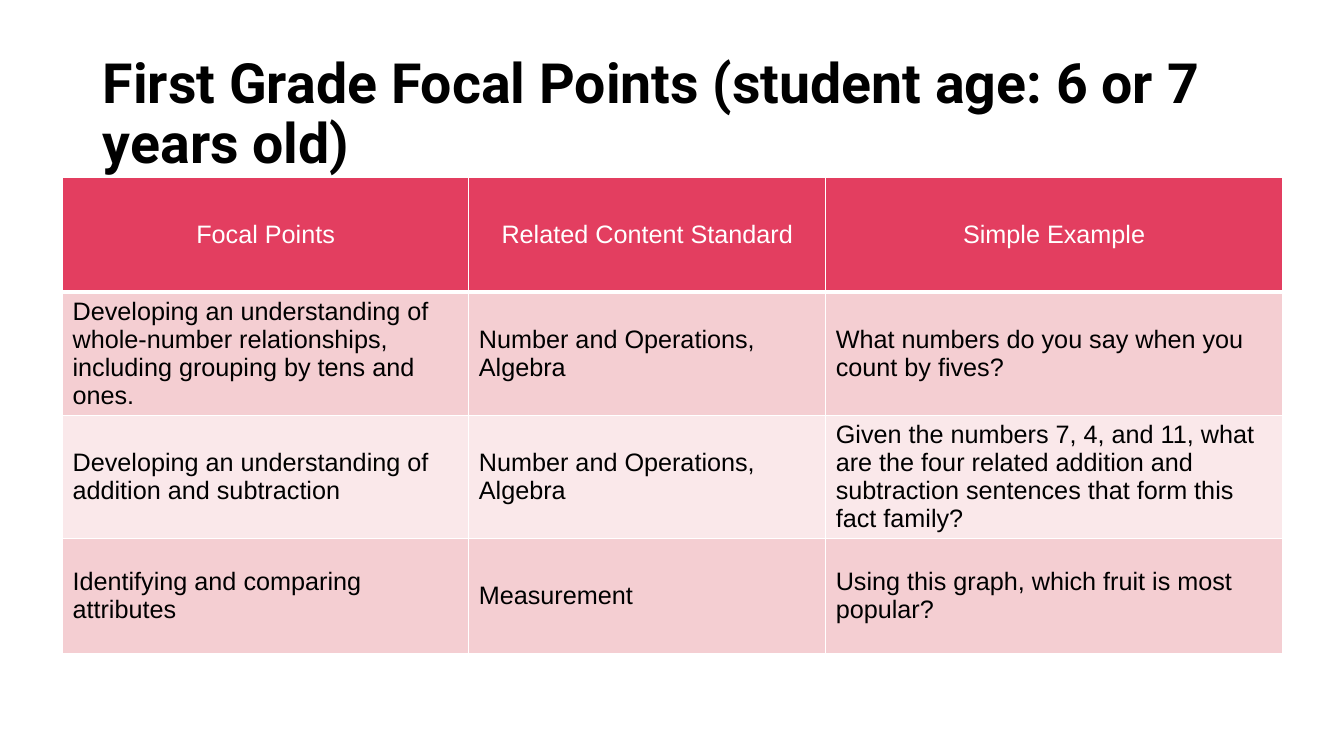
import pptx
import pptx.util
import pptx.dml.color
import pptx.enum.text
import pptx.oxml
import pptx.oxml.ns
from pptx.util import Inches

COLORS = {
    "black": "000000",
    "white": "FFFFFF",
    "header": "E33E60",
    "band_dark": "F4CED2",
    "band_light": "FAE8EA",
}
COLUMN_WIDTHS = [4.03, 3.54, 4.53]
ROW_HEIGHT = 1.14
ROWS = [
    ["Focal Points", "Related Content Standard", "Simple Example"],
    ["Developing an understanding of whole-number relationships, "
     "including grouping by tens and ones.",
     "Number and Operations, Algebra",
     "What numbers do you say when you count by fives?"],
    ["Developing an understanding of addition and subtraction",
     "Number and Operations, Algebra",
     "Given the numbers 7, 4, and 11, what are the four related addition "
     "and subtraction sentences that form this fact family?"],
    ["Identifying and comparing attributes",
     "Measurement",
     "Using this graph, which fruit is most popular?"],
]


def rgb(name):
    return pptx.dml.color.RGBColor.from_string(COLORS[name])


def add_run(p, text, font, size, color, bold=False):
    r = p.add_run()
    r.text = text
    r.font.name = font
    r.font.size = pptx.util.Pt(size)
    r.font.bold = bold
    r.font.color.rgb = rgb(color)


def set_borders(cell, bottom_width):
    tcPr = cell._tc.get_or_add_tcPr()
    widths = {"lnL": 1, "lnR": 1, "lnT": 1, "lnB": bottom_width}
    for i, (side, width) in enumerate(widths.items()):
        tcPr.insert(i, pptx.oxml.parse_xml(
            f'<a:{side} {pptx.oxml.ns.nsdecls("a")} w="{pptx.util.Pt(width)}">'
            f'<a:solidFill><a:srgbClr val="{COLORS["white"]}"/></a:solidFill>'
            f'</a:{side}>'))


def format_title(s, text):
    title = s.shapes.title
    title.left, title.top = Inches(0.92), Inches(0.66)
    title.width, title.height = Inches(11.5), Inches(0.97)
    tf = title.text_frame
    tf.word_wrap = True
    tf.auto_size = pptx.enum.text.MSO_AUTO_SIZE.NONE
    tf.vertical_anchor = pptx.enum.text.MSO_ANCHOR.MIDDLE
    p = tf.paragraphs[0]
    p.alignment = pptx.enum.text.PP_ALIGN.LEFT
    p.line_spacing = 0.9
    add_run(p, text, "Roboto", 39.6, "black", bold=True)


def fill_cell(cell, text, is_header, fill):
    cell.fill.solid()
    cell.fill.fore_color.rgb = rgb(fill)
    set_borders(cell, 3 if is_header else 1)
    cell.vertical_anchor = pptx.enum.text.MSO_ANCHOR.MIDDLE
    p = cell.text_frame.paragraphs[0]
    align = pptx.enum.text.PP_ALIGN
    p.alignment = align.CENTER if is_header else align.LEFT
    add_run(p, text, "Arial", 18, "white" if is_header else "black")


def add_focal_table(s):
    table = s.shapes.add_table(
        len(ROWS), len(COLUMN_WIDTHS), Inches(0.62), Inches(1.76),
        Inches(sum(COLUMN_WIDTHS)), Inches(ROW_HEIGHT * len(ROWS))).table
    for column, width in zip(table.columns, COLUMN_WIDTHS):
        column.width = Inches(width)
    for i, texts in enumerate(ROWS):
        table.rows[i].height = Inches(ROW_HEIGHT)
        band = "band_dark" if i % 2 else "band_light"
        for j, text in enumerate(texts):
            fill_cell(table.cell(i, j), text, i == 0, band if i else "header")


def main():
    prs = pptx.Presentation()
    prs.slide_width, prs.slide_height = Inches(13.33), Inches(7.5)
    s = prs.slides.add_slide(prs.slide_layouts[5])  # Title Only
    s.background.fill.solid()
    s.background.fill.fore_color.rgb = rgb("white")

    # Title
    format_title(s, "First Grade Focal Points (student age: 6 or 7 years old)")

    # Focal points table
    add_focal_table(s)

    prs.save("out.pptx")


if __name__ == "__main__":
    main()
